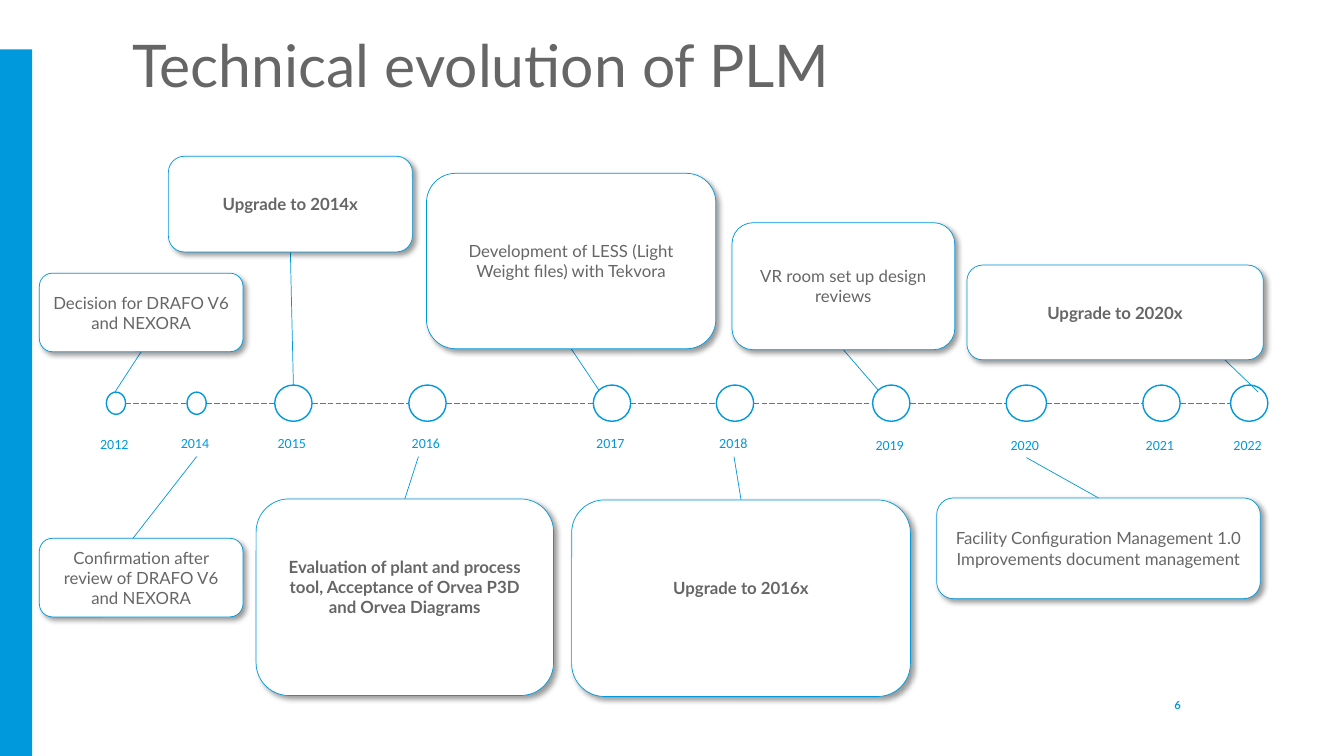
from dataclasses import dataclass

from lxml import etree
from pptx import Presentation
from pptx import util as u
from pptx.dml.color import RGBColor
from pptx.enum import dml, shapes, text
from pptx.oxml import parse_xml
from pptx.oxml.ns import nsdecls, qn

COLORS = {"blue": "0099DC", "gray": "666666", "white": "FFFFFF"}
CELL = u.Inches(0.1)  # side of one grid cell
SLIDE_COLS, SLIDE_ROWS = 133.3, 75

CARD_SHADOW = (
    f'<a:outerShdw {nsdecls("a")} blurRad="50800" dist="38100" dir="2700000" '
    'algn="tl" rotWithShape="0"><a:srgbClr val="000000">'
    '<a:alpha val="40000"/></a:srgbClr></a:outerShdw>'
)

# year, centre column, columns and rows of the dot, row of the label
MILESTONES = [
    ("2012", 2.7, 1.9, 2.2, 4.7),
    ("2014", 10.7, 1.9, 2.2, 4.6),
    ("2015", 20.3, 3.7, 3.6, 4.6),
    ("2016", 33.6, 3.7, 3.6, 4.6),
    ("2017", 51.9, 3.7, 3.6, 4.6),
    ("2018", 64.1, 3.7, 3.6, 4.6),
    ("2019", 79.6, 3.7, 3.6, 4.8),
    ("2020", 93, 4, 3.6, 4.8),
    ("2021", 106.4, 3.7, 3.6, 4.8),
    ("2022", 115.1, 3.7, 3.6, 4.8),
]

# card place, leader end, lines of text, options
EVENTS_ABOVE = [
    ((0, 11.6, 20.2, 7.8), (7.5, 23.4), ["Decision for DRAFO V6 and NEXORA"], {}),
    ((12.8, 0, 24.2, 9.5), (25.2, 22.7), ["Upgrade to 2014x"], {"bold": True}),
    ((38.4, 1.7, 28.7, 17.4), (55.5, 23.2),
     ["Development of LESS (Light Weight files) with Tekvora"], {}),
    ((68.7, 6.6, 22.1, 12.6), (83.2, 23.2), ["VR room set up design reviews"], {}),
    ((92, 10.8, 29.4, 9.4), (120.9, 23.4), ["Upgrade to 2020x"],
     {"bold": True, "leader_share": 0.87}),
]
EVENTS_BELOW = [
    ((0, 4, 20.2, 7.8), (15.6, -4.1),
     ["Confirmation after review of DRAFO V6 and NEXORA"], {"leader_share": 0.46}),
    ((21.5, 0.1, 29.5, 19.5), (37.6, -4.1),
     ["Evaluation of plant and process tool, Acceptance of Orvea P3D "
      "and Orvea Diagrams"], {"bold": True, "bottom": 2.5}),
    ((52.8, 0.2, 33.6, 19.5), (68.9, -4.1), ["Upgrade to 2016x"],
     {"bold": True, "bottom": 2.5}),
    ((89, 0, 32.1, 10), (97.9, -4),
     ["Facility Configuration Management 1.0", "Improvements document management"], {}),
]


@dataclass
class Box:
    """A region of the slide, in grid columns and rows."""
    col: float
    row: float
    cols: float
    rows: float

    def point(self, col, row):
        return int((self.col + col) * CELL), int((self.row + row) * CELL)

    def place(self, col, row, cols, rows):
        return *self.point(col, row), int(cols * CELL), int(rows * CELL)


def rgb(name):
    return RGBColor.from_string(COLORS[name])


def write(shape, lines, *, size, font="Lato", color="gray", bold=False,
          align=text.PP_ALIGN.LEFT, anchor=text.MSO_ANCHOR.TOP, bottom=0.5,
          spacing=None):
    frame = shape.text_frame
    frame.word_wrap = True
    frame.vertical_anchor = anchor
    frame.margin_left = frame.margin_right = CELL
    frame.margin_top = CELL // 2
    frame.margin_bottom = int(bottom * CELL)
    for index, line in enumerate(lines):
        paragraph = frame.add_paragraph() if index else frame.paragraphs[0]
        paragraph.alignment = align
        paragraph.line_spacing = spacing
        run = paragraph.add_run()
        run.text = line
        run.font.name = font
        run.font.size = u.Pt(size)
        run.font.bold = bold
        run.font.color.rgb = rgb(color)


def add_outlined(slide, kind, place, *, fill="white", width=1):
    shape = slide.shapes.add_shape(kind, *place)
    shape.shadow.inherit = False
    shape.fill.solid()
    shape.fill.fore_color.rgb = rgb(fill)
    if width:
        shape.line.color.rgb = rgb("blue")
        shape.line.width = u.Pt(width)
    else:
        shape.line.fill.background()
    return shape


def add_line(slide, start, end, dashed=False):
    line = slide.shapes.add_connector(shapes.MSO_CONNECTOR.STRAIGHT, *start, *end)
    line.line.color.rgb = rgb("blue")
    line.line.width = u.Pt(0.5)
    if dashed:
        line.line.dash_style = dml.MSO_LINE.LONG_DASH
    etree.SubElement(line._element.spPr, qn("a:effectLst"))


def add_side_bar(slide, box):
    add_outlined(slide, shapes.MSO_SHAPE.RECTANGLE,
                 box.place(0, 0, box.cols, box.rows), fill="blue", width=0)


def add_title(slide, box):
    title = slide.shapes.title
    title.left, title.top, title.width, title.height = box.place(
        0, 0, box.cols, box.rows)
    write(title, ["Technical evolution of PLM"], size=42, bottom=0.2,
          anchor=text.MSO_ANCHOR.BOTTOM, spacing=0.9)


def add_page_number(slide, box):
    number = slide.shapes.add_textbox(*box.place(0, 0, box.cols, box.rows))
    write(number, ["6"], size=8, color="blue", bold=True,
          align=text.PP_ALIGN.RIGHT, anchor=text.MSO_ANCHOR.MIDDLE)


def add_timeline(slide, box):
    axis_row = 2
    label_cols, label_rows = 5.1, 2.7
    previous_edge = None
    for year, center, cols, rows, label_row in MILESTONES:
        left = center - cols / 2
        if previous_edge is not None:
            add_line(slide, box.point(previous_edge, axis_row),
                     box.point(left, axis_row), dashed=True)
        add_outlined(slide, shapes.MSO_SHAPE.OVAL,
                     box.place(left, axis_row - rows / 2, cols, rows))
        label = slide.shapes.add_textbox(
            *box.place(center - label_cols / 2, label_row, label_cols, label_rows))
        write(label, [year], size=10, font="Calibri", color="blue")
        previous_edge = left + cols


def add_events(slide, box, events, above):
    """Draw cards, each with a leader from the edge that faces the timeline."""
    for place, leader_end, lines, options in events:
        col, row, cols, rows = place
        share = options.get("leader_share", 0.5)
        edge = row + rows if above else row
        add_line(slide, box.point(col + cols * share, edge), box.point(*leader_end))
        card = add_outlined(slide, shapes.MSO_SHAPE.ROUNDED_RECTANGLE,
                            box.place(*place), width=0.5)
        card._element.spPr.find(qn("a:effectLst")).append(parse_xml(CARD_SHADOW))
        write(card, lines, size=12, bold=options.get("bold", False),
              bottom=options.get("bottom", 0.5), align=text.PP_ALIGN.CENTER,
              anchor=text.MSO_ANCHOR.MIDDLE)


def main():
    deck = Presentation()
    deck.slide_width = int(SLIDE_COLS * CELL)
    deck.slide_height = SLIDE_ROWS * CELL
    slide = deck.slides.add_slide(deck.slide_layouts[5])
    add_side_bar(slide, Box(0, 4.9, 3.2, 70.1))
    add_title(slide, Box(12.1, 2.9, 102.4, 7.2))
    add_page_number(slide, Box(88.1, 67.9, 30, 4))
    add_timeline(slide, Box(8.8, 38, 119, 7.5))
    add_events(slide, Box(3.9, 15.5, 121.4, 20.2), EVENTS_ABOVE, above=True)
    add_events(slide, Box(3.9, 49.4, 121.1, 19.7), EVENTS_BELOW, above=False)
    deck.save("out.pptx")


if __name__ == "__main__":
    main()
